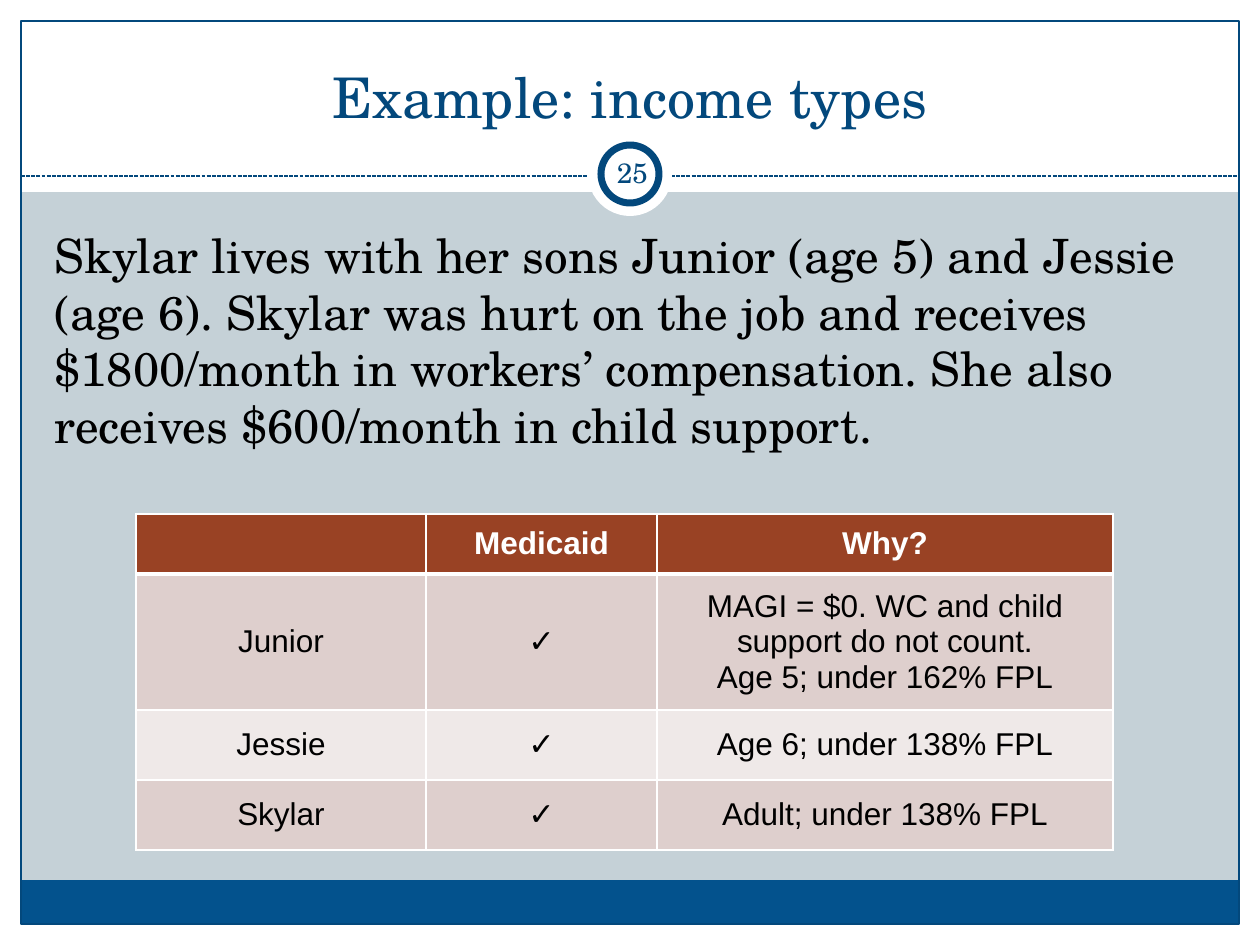
import pptx
import pptx.dml.color
import pptx.enum.dml
import pptx.enum.shapes
import pptx.enum.text
import pptx.oxml
import pptx.oxml.ns
import pptx.util

RGBColor = pptx.dml.color.RGBColor
Shape = pptx.enum.shapes.MSO_SHAPE
Align = pptx.enum.text.PP_ALIGN
Anchor = pptx.enum.text.MSO_ANCHOR

NAVY = RGBColor(0x03, 0x48, 0x7C)
BLUE = RGBColor(0x03, 0x52, 0x8D)
MIST = RGBColor(0xC5, 0xD1, 0xD7)
RUST = RGBColor(0x99, 0x42, 0x24)
ROSE = RGBColor(0xDE, 0xCF, 0xCD)
PALE = RGBColor(0xEF, 0xE9, 0xE8)
WHITE = RGBColor(0xFF, 0xFF, 0xFF)
BLACK = RGBColor(0x00, 0x00, 0x00)

SERIF = "TeX Gyre Schola"
SANS = "Arial"
WIDTH, HEIGHT, MARGIN = 1260, 945, 21

STORY = (
    "Skylar lives with her sons Junior (age 5) and Jessie (age 6). "
    "Skylar was hurt on the job and receives $1800/month in workers’ "
    "compensation. She also receives $600/month in child support."
)
ROWS = [
    ["", "Medicaid", "Why?"],
    ["Junior", "✓", "MAGI = $0. WC and child support do not count.\nAge 5; under 162% FPL"],
    ["Jessie", "✓", "Age 6; under 138% FPL"],
    ["Skylar", "✓", "Adult; under 138% FPL"],
]
COLUMN_WIDTHS = [290, 231, 456]
ROW_HEIGHTS = [60, 136, 70, 70]


def px(length):
    return pptx.util.Emu(round(length * 914400 / 126))


def write(frame, text, size=18, font=SANS, color=BLACK, bold=False,
          align=Align.CENTER, before=0):
    frame.text = text
    for para in frame.paragraphs:
        para.alignment = align
        para.space_before = pptx.util.Pt(before)
        for span in para.runs:
            span.font.size = pptx.util.Pt(size)
            span.font.name = font
            span.font.color.rgb = color
            span.font.bold = bold


def add_text(page, text, left, top, width, height, anchor=Anchor.TOP, inset=None, **style):
    frame = page.shapes.add_textbox(px(left), px(top), px(width), px(height)).text_frame
    frame.word_wrap = True
    frame.vertical_anchor = anchor
    if inset is not None:
        frame.margin_left = frame.margin_right = px(inset)
    write(frame, text, **style)


def add_shape(page, kind, left, top, width, height, fill=None, line=None, weight=0.75):
    shape = page.shapes.add_shape(kind, px(left), px(top), px(width), px(height))
    shape.shadow.inherit = False
    if fill is None:
        shape.fill.background()
    else:
        shape.fill.solid()
        shape.fill.fore_color.rgb = fill
    if line is None:
        shape.line.fill.background()
    else:
        shape.line.color.rgb = line
        shape.line.width = pptx.util.Pt(weight)


def add_dashed_rule(page, left, right, y):
    rule = page.shapes.add_connector(
        pptx.enum.shapes.MSO_CONNECTOR.STRAIGHT, px(left), px(y), px(right), px(y))
    rule.line.color.rgb = NAVY
    rule.line.width = pptx.util.Pt(0.75)
    rule.line.dash_style = pptx.enum.dml.MSO_LINE.SQUARE_DOT
    rule.element.spPr.append(rule.element.spPr.makeelement(pptx.oxml.ns.qn("a:effectLst"), {}))


def add_borders(cell, **weights):
    """Draw white cell borders; weights maps L, R, T and B to points."""
    properties = cell._tc.get_or_add_tcPr()
    for side, weight in weights.items():
        properties.append(pptx.oxml.parse_xml(
            f'<a:ln{side} {pptx.oxml.ns.nsdecls("a")} w="{pptx.util.Pt(weight)}">'
            f'<a:solidFill><a:srgbClr val="{WHITE}"/></a:solidFill></a:ln{side}>'))


def add_table(page, left, top):
    table = page.shapes.add_table(
        len(ROWS), len(COLUMN_WIDTHS), px(left), px(top),
        px(sum(COLUMN_WIDTHS)), px(sum(ROW_HEIGHTS))).table
    for column, width in zip(table.columns, COLUMN_WIDTHS):
        column.width = px(width)
    for number, (row, height, texts) in enumerate(zip(table.rows, ROW_HEIGHTS, ROWS)):
        row.height = px(height)
        header = number == 0
        for cell, text in zip(row.cells, texts):
            cell.vertical_anchor = Anchor.MIDDLE
            add_borders(cell, L=1, R=1, T=3 if number == 1 else 1, B=3 if header else 1)
            cell.fill.solid()
            cell.fill.fore_color.rgb = RUST if header else ROSE if number % 2 else PALE
            write(cell.text_frame, text, color=WHITE if header else BLACK, bold=header)


def add_frame(page):
    page.background.fill.solid()
    page.background.fill.fore_color.rgb = MIST
    inner_width, inner_height = WIDTH - 2 * MARGIN, HEIGHT - 2 * MARGIN
    for edge in [
        (0, HEIGHT - MARGIN, WIDTH, MARGIN),
        (0, 0, WIDTH, 192),
        (0, 0, MARGIN, HEIGHT),
        (WIDTH - MARGIN, 0, MARGIN, HEIGHT),
    ]:
        add_shape(page, Shape.RECTANGLE, *edge, fill=WHITE)
    add_shape(page, Shape.RECTANGLE, MARGIN, 880, inner_width, 44, fill=BLUE)
    add_shape(page, Shape.RECTANGLE, MARGIN, MARGIN, inner_width, inner_height, line=NAVY)
    add_dashed_rule(page, MARGIN, WIDTH - MARGIN, 176)


def add_page_number(page, number):
    for size, line in [(84, None), (58, NAVY)]:
        add_shape(page, Shape.OVAL, (WIDTH - size) / 2, 174 - size / 2, size, size,
                  fill=WHITE, line=line, weight=4)
    add_text(page, number, 601, 142, 63, 60, anchor=Anchor.MIDDLE, inset=6,
             size=16, font=SERIF, color=NAVY)


def main():
    deck = pptx.Presentation()
    deck.slide_width, deck.slide_height = px(WIDTH), px(HEIGHT)
    page = deck.slides.add_slide(deck.slide_layouts[6])
    add_frame(page)
    add_page_number(page, "25")
    add_text(page, "Example: income types", 42, 32, 1176, 104, anchor=Anchor.BOTTOM,
             size=32, font=SERIF, color=NAVY)
    add_text(page, STORY, 42, 220, 1172, 280, size=27, font=SERIF,
             align=Align.LEFT, before=5.4)
    add_table(page, 136, 514)
    deck.save("out.pptx")


if __name__ == "__main__":
    main()
